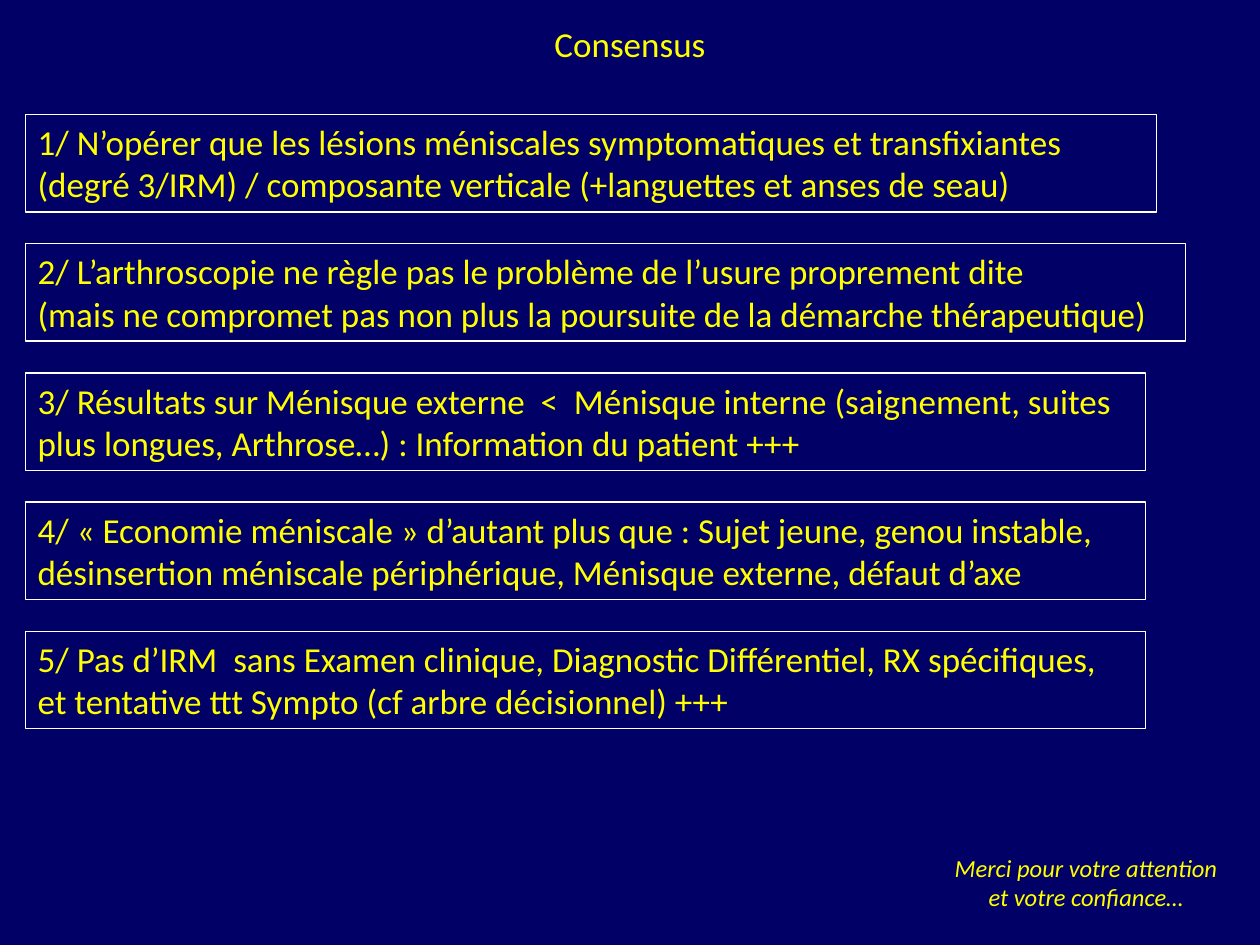
from dataclasses import dataclass

from pptx import Presentation
from pptx import util as u
from pptx.dml.color import RGBColor
from pptx.enum import shapes, text

NAVY, YELLOW, WHITE = "000066", "FFFF00", "FFFFFF"
LEFT, FIRST_TOP, PITCH, BOX_HEIGHT = 14.4, 65.5, 73.8, 55.6


@dataclass
class Statement:
    width: float
    wording: str


STATEMENTS = [
    Statement(646.6, "1/ N’opérer que les lésions méniscales symptomatiques et transfixiantes "
                     "(degré 3/IRM) / composante verticale (+languettes et anses de seau)"),
    Statement(663.1, "2/ L’arthroscopie ne règle pas le problème de l’usure proprement dite\n"
                     "(mais ne compromet pas non plus la poursuite de la démarche thérapeutique)"),
    Statement(640.1, "3/ Résultats sur Ménisque externe  <  Ménisque interne (saignement, suites "
                     "plus longues, Arthrose…) : Information du patient +++"),
    Statement(640.1, "4/ « Economie méniscale » d’autant plus que : Sujet jeune, genou instable, "
                     "désinsertion méniscale périphérique, Ménisque externe, défaut d’axe"),
    Statement(640.1, "5/ Pas d’IRM  sans Examen clinique, Diagnostic Différentiel, RX spécifiques, "
                     "et tentative ttt Sympto (cf arbre décisionnel) +++"),
]


def colour(hex_code: str) -> RGBColor:
    return RGBColor.from_string(hex_code)


def write(frame, wording: str, *, size: float = 20, italic: bool = False,
          align=text.PP_ALIGN.LEFT) -> None:
    frame.word_wrap = True
    frame.auto_size = text.MSO_AUTO_SIZE.SHAPE_TO_FIT_TEXT
    frame.vertical_anchor = text.MSO_ANCHOR.TOP
    frame.text = wording
    for paragraph in frame.paragraphs:
        paragraph.alignment = align
        for run in paragraph.runs:
            run.font.name = "Calibri"
            run.font.size = u.Pt(size)
            run.font.italic = italic
            run.font.color.rgb = colour(YELLOW)


def add_caption(slide, left: float, top: float, width: float, height: float,
                wording: str, **text_format) -> None:
    caption = slide.shapes.add_textbox(u.Pt(left), u.Pt(top), u.Pt(width), u.Pt(height))
    write(caption.text_frame, wording, align=text.PP_ALIGN.CENTER, **text_format)


def add_statement(slide, statement: Statement, top: float) -> None:
    frame_box = slide.shapes.add_shape(
        shapes.MSO_SHAPE.RECTANGLE,
        u.Pt(LEFT), u.Pt(top), u.Pt(statement.width), u.Pt(BOX_HEIGHT))
    frame_box.shadow.inherit = False
    frame_box.fill.background()
    frame_box.line.color.rgb = colour(WHITE)
    frame_box.line.width = u.Pt(0.75)
    write(frame_box.text_frame, statement.wording)


def main() -> None:
    deck = Presentation()
    deck.slide_width, deck.slide_height = u.Pt(720), u.Pt(540)
    slide = deck.slides.add_slide(deck.slide_layouts[6])
    slide.background.fill.solid()
    slide.background.fill.fore_color.rgb = colour(NAVY)

    # Title
    add_caption(slide, 229.7, 9.4, 260.6, 31.5, "Consensus")

    # Consensus statements, evenly stacked
    for index, statement in enumerate(STATEMENTS):
        add_statement(slide, statement, FIRST_TOP + index * PITCH)

    # Closing thanks
    add_caption(slide, 535.7, 483.8, 169.9, 41,
                "Merci pour votre attention et votre confiance…", size=14, italic=True)

    deck.save("out.pptx")


if __name__ == "__main__":
    main()
